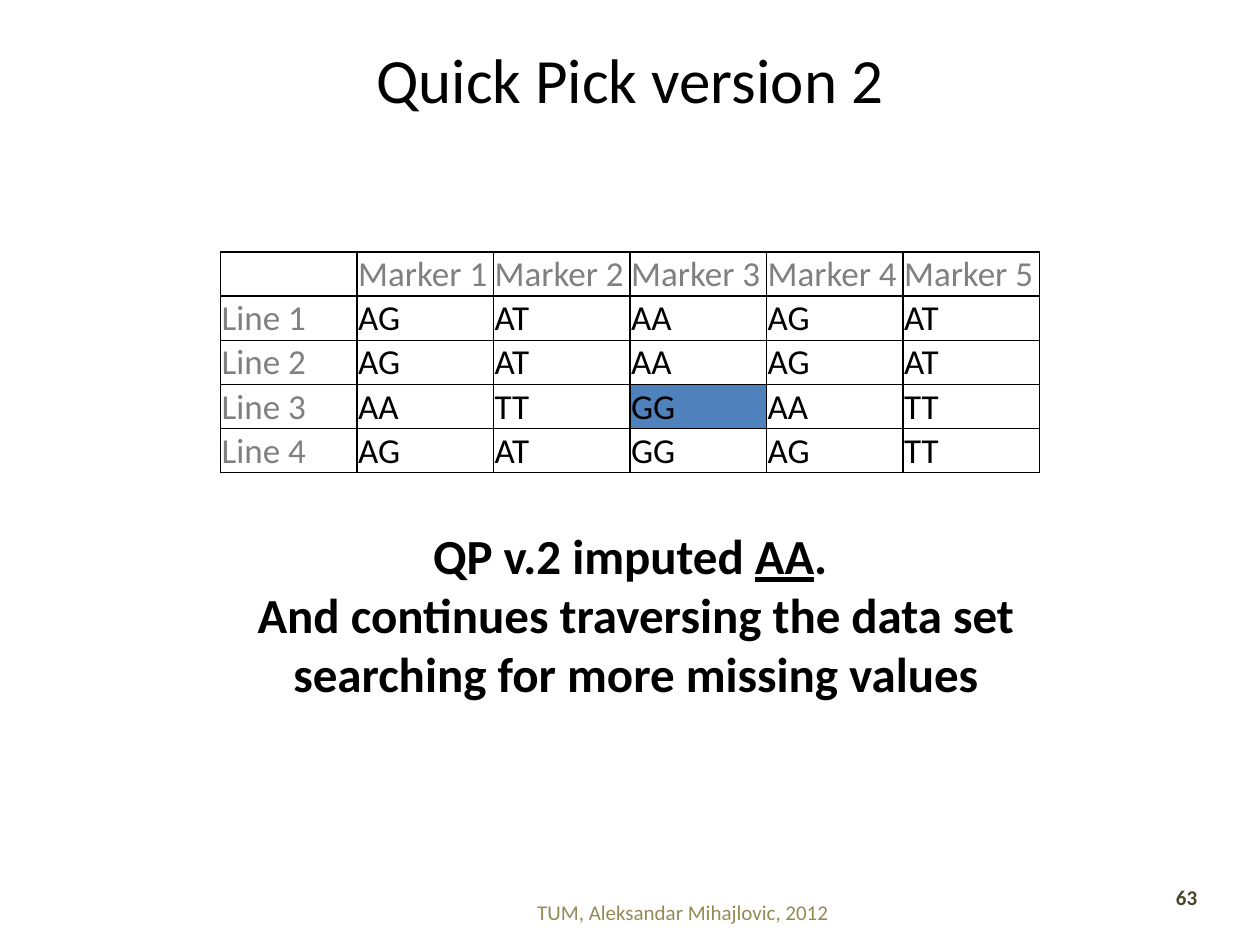
from dataclasses import dataclass

from lxml.etree import SubElement
from pptx import Presentation
from pptx.dml.color import RGBColor as RGB
from pptx.enum.text import MSO_ANCHOR as ANCHOR, PP_ALIGN as ALIGN
from pptx.oxml.ns import qn
from pptx.util import Inches, Pt


@dataclass(frozen=True)
class Theme:
    font: str = "Calibri"
    black: str = "000000"
    label: str = "808080"
    highlight: str = "4F81BD"
    footer: str = "948A54"
    number: str = "4A452A"
    title_size: int = 36
    body_size: int = 28
    table_size: int = 20
    small_size: int = 12
    border: int = 1


class SlideBuilder:
    """Places elements on a grid of quarter-inch columns and rows."""

    UNIT = 0.25

    def __init__(self, prs, theme):
        self.theme = theme
        self.s = prs.slides.add_slide(prs.slide_layouts[5])

    def box(self, *cells):
        return [Inches(n * self.UNIT) for n in cells]

    def add_run(self, p, text, size, color, bold=False, underline=False):
        r = p.add_run()
        r.text = text
        f = r.font
        f.name, f.size, f.bold = self.theme.font, Pt(size), bold
        f.underline = underline
        f.color.rgb = RGB.from_string(color)

    def title(self, text, *cells):
        sp = self.s.shapes.title
        sp.left, sp.top, sp.width, sp.height = self.box(*cells)
        tf = sp.text_frame
        tf.vertical_anchor = ANCHOR.MIDDLE
        p = tf.paragraphs[0]
        p.alignment = ALIGN.CENTER
        self.add_run(p, text, self.theme.title_size, self.theme.black)

    def text(self, lines, cells, size, color, align=ALIGN.CENTER,
             anchor=ANCHOR.TOP, bold=False, top_inset=0.05):
        """Each line is a list of (text, underlined) runs."""
        tf = self.s.shapes.add_textbox(*self.box(*cells)).text_frame
        tf.word_wrap = True
        tf.vertical_anchor = anchor
        tf.margin_top = Inches(top_inset)
        p = tf.paragraphs[0]
        p.alignment = align
        for i, line in enumerate(lines):
            if i:
                p.add_line_break()
            for text, underline in line:
                self.add_run(p, text, size, color, bold, underline)

    def table(self, rows, cells, highlighted):
        t = self.theme
        tbl = self.s.shapes.add_table(len(rows), len(rows[0]),
                                      *self.box(*cells)).table
        tbl.first_row = tbl.horz_banding = False
        for i, row in enumerate(rows):
            for j, text in enumerate(row):
                cell = tbl.cell(i, j)
                cell.vertical_anchor = ANCHOR.BOTTOM
                cell.margin_left = cell.margin_right = Inches(0.01)
                cell.margin_top, cell.margin_bottom = Inches(0.01), 0
                self.borders(cell)
                if (i, j) == highlighted:
                    cell.fill.solid()
                    cell.fill.fore_color.rgb = RGB.from_string(t.highlight)
                else:
                    cell.fill.background()
                if text:
                    color = t.black if i and j else t.label
                    self.add_run(cell.text_frame.paragraphs[0], text,
                                 t.table_size, color)

    def borders(self, cell):
        # Border lines must come before the cell's fill
        tc_pr = cell._tc.get_or_add_tcPr()
        for side in ("a:lnL", "a:lnR", "a:lnT", "a:lnB"):
            ln = SubElement(tc_pr, qn(side), w=str(Pt(self.theme.border)))
            fill = SubElement(ln, qn("a:solidFill"))
            SubElement(fill, qn("a:srgbClr"), val=self.theme.black)


def main():
    prs = Presentation()
    prs.slide_width, prs.slide_height = Inches(10), Inches(7.5)
    theme = Theme()
    b = SlideBuilder(prs, theme)

    b.title("Quick Pick version 2", 2, 0, 36, 5)

    # Marker values, with the imputed cell highlighted
    values = ["AG AT AA AG AT", "AG AT AA AG AT",
              "AA TT GG AA TT", "AG AT GG AG TT"]
    rows = [[""] + [f"Marker {n}" for n in range(1, 6)]]
    rows += [[f"Line {n}"] + v.split() for n, v in enumerate(values, 1)]
    b.table(rows, (7, 8, 26, 7), highlighted=(3, 3))

    # Conclusion
    b.text([[("QP v.2 imputed ", False), ("AA", True), (". ", False)],
            [("And continues traversing the data set "
              "searching for more missing values", False)]],
           (7.68, 15.96, 25, 6.6), theme.body_size, theme.black,
           bold=True, top_inset=0.18)

    # Footer and slide number
    b.text([[("TUM, Aleksandar Mihajlovic, 2012", False)]],
           (10.12, 28.16, 23.12, 1.56), theme.small_size, theme.footer,
           anchor=ANCHOR.MIDDLE)
    b.text([[("63", False)]], (34.84, 27.88, 3.56, 1.56),
           theme.small_size, theme.number, align=ALIGN.RIGHT, bold=True)

    prs.save("out.pptx")


if __name__ == "__main__":
    main()
